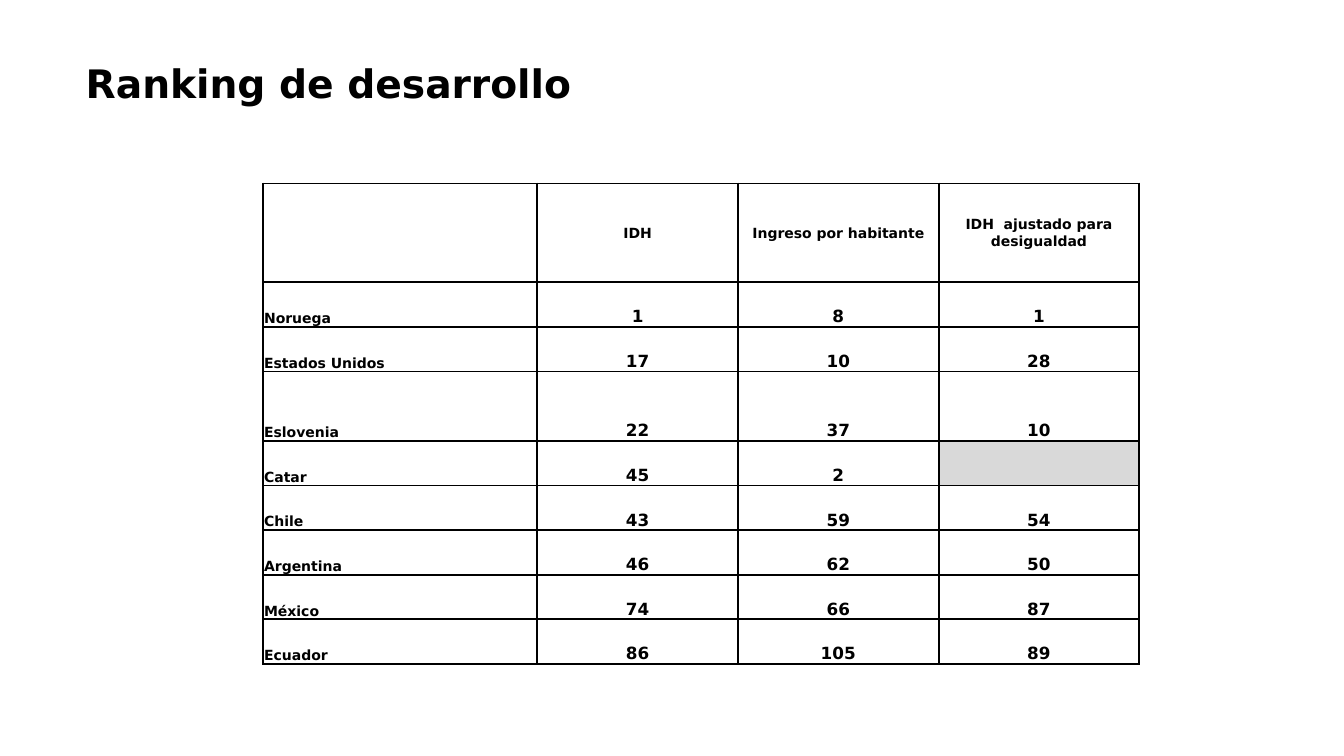
from dataclasses import dataclass

from lxml.etree import SubElement
from pptx import Presentation
from pptx.dml.color import RGBColor
from pptx.enum.text import MSO_ANCHOR, MSO_AUTO_SIZE, PP_ALIGN
from pptx.oxml.ns import qn
from pptx.util import Inches, Pt


@dataclass(frozen=True)
class Theme:
    font: str = "DejaVu Sans"
    ink: str = "000000"
    missing: str = "D9D9D9"
    title_size: int = 28
    label_size: int = 10
    value_size: int = 12
    border: float = 1.5


THEME = Theme()
HEADERS = ["", "IDH", "Ingreso por habitante", "IDH  ajustado para desigualdad"]
RANKING = [
    ("Noruega", 1, 8, 1),
    ("Estados Unidos", 17, 10, 28),
    ("Eslovenia", 22, 37, 10),
    ("Catar", 45, 2, None),
    ("Chile", 43, 59, 54),
    ("Argentina", 46, 62, 50),
    ("México", 74, 66, 87),
    ("Ecuador", 86, 105, 89),
]
TABLE_HEIGHT = 4.77
TALL_ROWS = {0: 0.98, 3: 0.69}


def style_text(paragraph, size, alignment):
    paragraph.alignment = alignment
    paragraph.font.name = THEME.font
    paragraph.font.size = Pt(size)
    paragraph.font.bold = True
    paragraph.font.color.rgb = RGBColor.from_string(THEME.ink)


def add_borders(cell):
    properties = cell._tc.get_or_add_tcPr()
    for side in ("lnL", "lnR", "lnT", "lnB"):
        line = SubElement(properties, qn(f"a:{side}"), w=str(Pt(THEME.border)))
        fill = SubElement(line, qn("a:solidFill"))
        SubElement(fill, qn("a:srgbClr"), val=THEME.ink)


presentation = Presentation()
presentation.slide_width = Inches(13.33)
presentation.slide_height = Inches(7.5)
slide = presentation.slides.add_slide(presentation.slide_layouts[5])

title = slide.shapes.title
title.left, title.top = Inches(0.75), Inches(0.49)
title.width, title.height = Inches(8.02), Inches(1.45)
title_frame = title.text_frame
title_frame.text = "Ranking de desarrollo"
title_frame.auto_size = MSO_AUTO_SIZE.NONE
title_frame.vertical_anchor = MSO_ANCHOR.MIDDLE
title_frame.margin_bottom = Inches(0.77)
title_frame.paragraphs[0].line_spacing = 0.9
style_text(title_frame.paragraphs[0], THEME.title_size, PP_ALIGN.LEFT)

rows = [HEADERS, *RANKING]
table = slide.shapes.add_table(
    len(rows), len(HEADERS), Inches(2.61), Inches(1.82), Inches(8.68), Inches(TABLE_HEIGHT)
).table
table.first_row = False
table.horz_banding = False
for column_index, column in enumerate(table.columns):
    column.width = Inches(1.99 if column_index else 2.72)
normal_height = (TABLE_HEIGHT - sum(TALL_ROWS.values())) / (len(rows) - len(TALL_ROWS))

for row_index, row in enumerate(rows):
    table.rows[row_index].height = Inches(TALL_ROWS.get(row_index, normal_height))
    for column_index, content in enumerate(row):
        cell = table.cell(row_index, column_index)
        add_borders(cell)
        if content is None:
            cell.fill.solid()
            cell.fill.fore_color.rgb = RGBColor.from_string(THEME.missing)
        else:
            cell.fill.background()
            cell.text = str(content)
        cell.margin_left = cell.margin_right = cell.margin_top = Inches(0.01)
        cell.margin_bottom = 0
        cell.vertical_anchor = MSO_ANCHOR.BOTTOM if row_index else MSO_ANCHOR.MIDDLE
        is_value = row_index > 0 and column_index > 0
        style_text(
            cell.text_frame.paragraphs[0],
            THEME.value_size if is_value else THEME.label_size,
            PP_ALIGN.CENTER if column_index else PP_ALIGN.LEFT,
        )

presentation.save("out.pptx")
